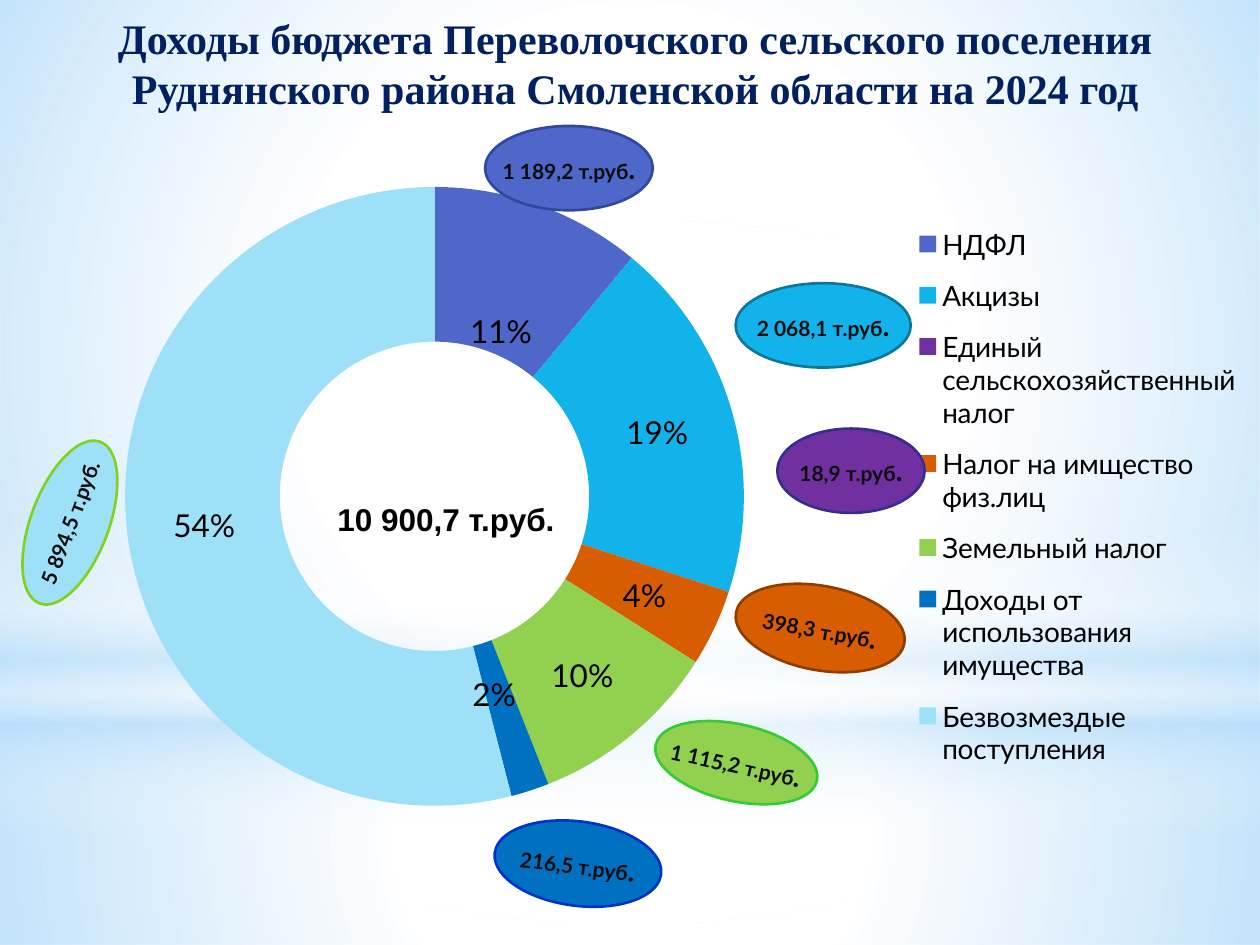
"""Build the budget revenue slide with a doughnut chart and value bubbles."""
from lxml.etree import SubElement
from pptx import Presentation
from pptx.chart.data import CategoryChartData
from pptx.dml.color import RGBColor
from pptx.enum.chart import XL_CHART_TYPE, XL_LEGEND_POSITION
from pptx.enum.shapes import MSO_SHAPE
from pptx.enum.text import MSO_ANCHOR, PP_ALIGN
from pptx.oxml import parse_xml
from pptx.oxml.ns import nsdecls, qn
from pptx.util import Cm, Pt

BLACK = RGBColor(0x00, 0x00, 0x00)
INK = RGBColor(0x0D, 0x0D, 0x0D)
NAVY = RGBColor(0x00, 0x20, 0x60)
WHITE = RGBColor(0xFF, 0xFF, 0xFF)
PALE = RGBColor(0xB4, 0xDC, 0xFA)
INDIGO = RGBColor(0x4E, 0x67, 0xC8)
CYAN = RGBColor(0x12, 0xB2, 0xEB)
PURPLE = RGBColor(0x70, 0x30, 0xA0)
ORANGE = RGBColor(0xD8, 0x5C, 0x00)
GREEN = RGBColor(0x92, 0xD0, 0x50)
BLUE = RGBColor(0x00, 0x70, 0xC0)
SKY = RGBColor(0x9E, 0xE0, 0xF8)


def add_run(para, text, font, size, color):
    run = para.add_run()
    run.text = text
    run.font.name = font
    run.font.size = Pt(size)
    run.font.bold = True
    run.font.color.rgb = color


def place(parent, index, **spots):
    layout = parent.find(qn("c:layout"))
    if layout is None:
        layout = parse_xml(f"<c:layout {nsdecls('c')}/>")
        parent.insert(index, layout)
    manual = SubElement(layout, qn("c:manualLayout"))
    for tag, value in spots.items():
        SubElement(manual, qn(f"c:{tag}")).set("val", str(value))


deck = Presentation()
deck.slide_width, deck.slide_height = Cm(25.4), Cm(19.05)
slide = deck.slides.add_slide(deck.slide_layouts[6])
slide.background.fill.solid()
slide.background.fill.fore_color.rgb = WHITE
shapes = slide.shapes

ROUND = ('<a:path path="circle"><a:fillToRect l="50000" t="50000" '
         'r="50000" b="50000"/></a:path>')
DOWN = '<a:lin ang="5400000" scaled="0"/>'
layers = [
    (MSO_SHAPE.RECTANGLE, 14.17, 4.88, ROUND,
     [(0, WHITE, 91), (37, WHITE, 76), (100, PALE, 79)]),
    (MSO_SHAPE.RECTANGLE, 0, 14.17, ROUND,
     [(0, WHITE, 89), (48, WHITE, 62), (100, PALE, 79)]),
    (MSO_SHAPE.RECTANGLE, 10.46, 6.35, DOWN,
     [(0, WHITE, 0), (29, WHITE, 30), (45, PALE, 40), (55, WHITE, 26),
      (65, PALE, 60), (100, WHITE, 0)]),
    (MSO_SHAPE.OVAL, 4.45, 14.17, ROUND, [(0, WHITE, 100), (56, WHITE, 0)]),
]
for kind, top, high, path, stops in layers:
    layer = shapes.add_shape(kind, 0, Cm(top), Cm(25.4), Cm(high))
    layer.shadow.inherit = False
    layer.line.fill.background()
    marks = "".join(
        f'<a:gs pos="{pos * 1000}"><a:srgbClr val="{color}">'
        f'<a:alpha val="{alpha * 1000}"/></a:srgbClr></a:gs>'
        for pos, color, alpha in stops)
    grad = parse_xml(f'<a:gradFill {nsdecls("a")} rotWithShape="1">'
                     f'<a:gsLst>{marks}</a:gsLst>{path}</a:gradFill>')
    layer.element.spPr.find(qn("a:prstGeom")).addnext(grad)

title = shapes.add_textbox(Cm(0.64), Cm(0.18), Cm(24.33), Cm(2.16))
frame = title.text_frame
frame.word_wrap = True
frame.vertical_anchor = MSO_ANCHOR.MIDDLE
frame.paragraphs[0].alignment = PP_ALIGN.CENTER
add_run(frame.paragraphs[0],
        "Доходы бюджета Переволочского сельского поселения "
        "Руднянского района Смоленской области на 2024 год",
        "Times New Roman", 24, NAVY)

parts = [
    ("НДФЛ", 11, INDIGO),
    ("Акцизы", 19, CYAN),
    ("Единый сельскохозяйственный налог", 0, PURPLE),
    ("Налог на имщество физ.лиц", 4, ORANGE),
    ("Земельный налог", 10, GREEN),
    ("Доходы от использования имущества", 2, BLUE),
    ("Безвозмездые поступления", 54, SKY),
]
data = CategoryChartData()
data.categories = [name for name, value, color in parts]
data.add_series("Series 1", [value for name, value, color in parts])
chart = shapes.add_chart(XL_CHART_TYPE.DOUGHNUT, Cm(0.81), Cm(2.54),
                         Cm(24.46), Cm(15.24), data).chart
chart.has_title = False
chart.font.name = "Lato"
chart.font.size = Pt(18)
chart.font.color.rgb = BLACK
chart.has_legend = True
legend = chart.legend
legend.position = XL_LEGEND_POSITION.RIGHT
legend.include_in_layout = False
legend.font.name = "Lato"
legend.font.size = Pt(16)
legend.font.color.rgb = BLACK
place(legend._element, 1, xMode="edge", yMode="edge",
      x=0.72, y=0.11, w=0.27, h=0.76)

plot = chart.plots[0]
plot.vary_by_categories = True
ring = plot._element
ring.find(qn("c:holeSize")).set("val", "50")
place(ring.getparent(), 0, layoutTarget="inner", xMode="edge", yMode="edge",
      x=0.07, y=0.08, w=0.51, h=0.82)
series = plot.series[0]
for index, (name, value, color) in enumerate(parts):
    fill = series.points[index].format.fill
    fill.solid()
    fill.fore_color.rgb = color
labels = series.data_labels
labels.show_value = False
labels.show_percentage = True
labels.show_legend_key = False
labels.font.name = "Lato"
labels.font.size = Pt(18)
labels.font.color.rgb = BLACK
flags = "".join(f'<c:show{flag} val="{int(flag == "Percent")}"/>' for flag in
                ("LegendKey", "Val", "CatName", "SerName", "Percent",
                 "BubbleSize"))
for spot, (index, x, y) in enumerate([(0, -0.01, 0.07), (5, -0.01, -0.03)]):
    label = parse_xml(f'<c:dLbl {nsdecls("c")}><c:idx val="{index}"/>'
                      f'{flags}</c:dLbl>')
    place(label, 1, x=x, y=y)
    labels._element.insert(spot, label)

bubbles = [
    ("216,5", 9.96, 16.56, 3.38, 1.7, 7.4, BLUE, RGBColor(0x00, 0x33, 0xCC), 16),
    ("1 189,2", 9.78, 2.54, 3.38, 1.7, 0, INDIGO, RGBColor(0x31, 0x48, 0x9F), 16),
    ("1 115,2", 13.18, 14.6, 3.33, 1.55, 12.6, GREEN, RGBColor(0x33, 0xCC, 0x33), 16),
    ("2 068,1", 14.83, 5.71, 3.53, 1.7, 0, CYAN, RGBColor(0x0C, 0x77, 0x9D), 16),
    ("398,3", 14.81, 11.81, 3.45, 1.7, 10.4, ORANGE, RGBColor(0x90, 0x3E, 0x00), 16),
    ("18,9", 15.67, 8.64, 2.97, 1.7, 0, PURPLE, RGBColor(0x35, 0x2E, 0x90), 16),
    ("5 894,5", -0.33, 9.75, 3.48, 1.57, 290.6, SKY, RGBColor(0x81, 0xD3, 0x1A), 12),
]
for sum_, left, top, wide, high, turn, color, edge, dot in bubbles:
    oval = shapes.add_shape(MSO_SHAPE.OVAL, Cm(left), Cm(top), Cm(wide), Cm(high))
    oval.shadow.inherit = False
    oval.rotation = turn
    oval.fill.solid()
    oval.fill.fore_color.rgb = color
    oval.line.color.rgb = edge
    oval.line.width = Pt(1.5)
    frame = oval.text_frame
    frame.word_wrap = False
    frame.vertical_anchor = MSO_ANCHOR.MIDDLE
    para = frame.paragraphs[0]
    para.alignment = PP_ALIGN.CENTER
    add_run(para, f"{sum_} т.руб", "Lato", 12, INK)
    add_run(para, ".", "Lato", dot, BLACK)

total = shapes.add_textbox(Cm(6.35), Cm(9.96), Cm(5.28), Cm(1.02))
total.text_frame.word_wrap = True
para = total.text_frame.paragraphs[0]
para.alignment = PP_ALIGN.CENTER
add_run(para, "10 900,7 т.руб.", "Arial", 18, BLACK)

deck.save("out.pptx")
